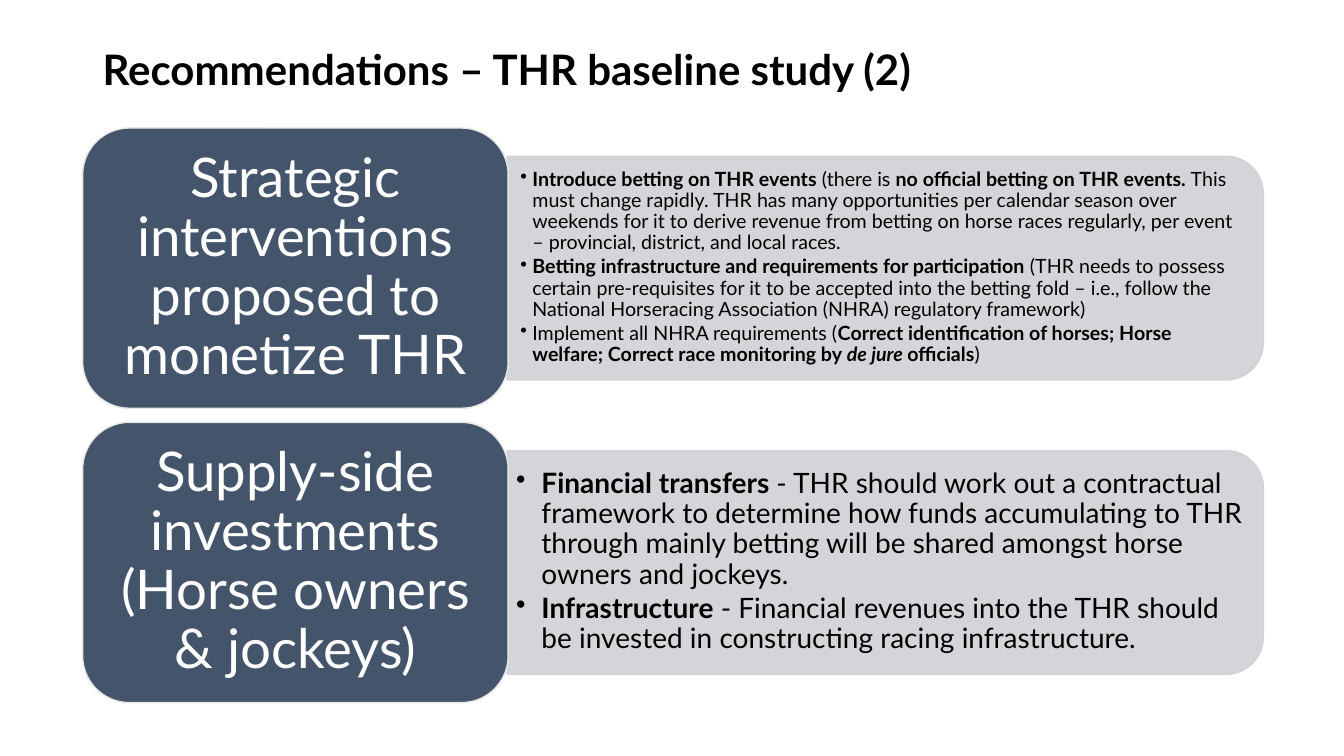
from dataclasses import dataclass

from lxml import etree
from pptx import Presentation
from pptx import util as u
from pptx.dml import color
from pptx.enum import shapes, text
from pptx.oxml import ns

INK = {"black": "000000", "white": "FFFFFF", "navy": "44546A",
       "edge": "E7E6E6", "grey": "CFD1D4"}
FONT = "Lato"


@dataclass
class Run:
    text: str
    bold: bool = False
    slant: bool = False


@dataclass
class Row:
    label: str
    size: int
    indent: float
    pad: float
    points: list[list[Run]]


ROWS = [
    Row("Strategic interventions proposed to monetize THR", 14, 0.12, 0.12, [
        [Run("Introduce betting on THR events", True),
         Run(" (there is "),
         Run("no official betting on THR events.", True),
         Run(" This must change rapidly. THR has many opportunities per calendar "
             "season over weekends for it to derive revenue from betting on horse "
             "races regularly, per event – provincial, district, and local races.")],
        [Run("Betting infrastructure and requirements for participation", True),
         Run(" (THR needs to possess certain pre-requisites for it to be accepted "
             "into the betting fold – i.e., follow the National Horseracing "
             "Association (NHRA) regulatory framework)")],
        [Run("Implement all NHRA requirements ("),
         Run("Correct identification of horses; Horse welfare; "
             "Correct race monitoring by ", True),
         Run("de jure ", True, True),
         Run("officials", True),
         Run(")")],
    ]),
    Row("Supply-side investments (Horse owners & jockeys)", 20, 0.25, 0.08, [
        [Run("Financial transfers ", True),
         Run("- THR should work out a contractual framework to determine how funds "
             "accumulating to THR through mainly betting will be shared amongst "
             "horse owners and jockeys.")],
        [Run("Infrastructure", True),
         Run(" - Financial revenues into the THR should be invested in "
             "constructing racing infrastructure.")],
    ]),
]


def rgb(name: str) -> color.RGBColor:
    return color.RGBColor.from_string(INK[name])


def box(shape, x: float, y: float):
    frame = shape.text_frame
    frame.word_wrap = True
    frame.vertical_anchor = text.MSO_ANCHOR.MIDDLE
    frame.margin_left = frame.margin_right = u.Inches(x)
    frame.margin_top = frame.margin_bottom = u.Inches(y)
    return frame


def space(para, after: int) -> etree._Element:
    para.line_spacing = 0.9
    props = para._p.get_or_add_pPr()
    gap = etree.SubElement(props, ns.qn("a:spcAft"))
    etree.SubElement(gap, ns.qn("a:spcPct"), val=str(after * 1000))
    return props


def write(para, runs: list[Run], size: int, ink: str) -> None:
    for item in runs:
        run = para.add_run()
        run.text = item.text
        font = run.font
        font.name, font.size = FONT, u.Pt(size)
        font.bold, font.italic = item.bold, item.slant
        font.color.rgb = rgb(ink)


def block(slide, kind, left: float, top: float, width: float, height: float,
          fill: str, line: str):
    shape = slide.shapes.add_shape(
        kind, *map(u.Inches, (left, top, width, height)))
    shape.shadow.inherit = False
    shape.fill.solid()
    shape.fill.fore_color.rgb = rgb(fill)
    shape.line.color.rgb = rgb(line)
    shape.line.width = u.Pt(1)
    return shape


def draw(slide, row: Row, top: float) -> None:
    kinds = shapes.MSO_SHAPE
    panel = block(slide, kinds.ROUND_2_SAME_RECTANGLE,
                  7.67, top - 2.36, 2.22, 7.5, "grey", "grey")
    panel.rotation = 90
    for tint in panel._element.spPr.iter(ns.qn("a:srgbClr")):
        etree.SubElement(tint, ns.qn("a:alpha"), val="90000")

    area = slide.shapes.add_textbox(
        *map(u.Inches, (5.04, top + 0.38, 7.39, 2.01)))
    frame = box(area, row.pad, row.pad / 2)
    for index, runs in enumerate(row.points):
        para = frame.add_paragraph() if index else frame.paragraphs[0]
        para.level = 1
        props = space(para, 15)
        props.set("marL", str(u.Inches(row.indent)))
        props.set("indent", str(-u.Inches(row.indent)))
        etree.SubElement(props, ns.qn("a:buChar"), char="•")
        write(para, runs, row.size, "black")

    card = block(slide, kinds.ROUNDED_RECTANGLE,
                 0.82, top, 4.22, 2.78, "navy", "edge")
    para = box(card, 0.16, 0.08).paragraphs[0]
    para.alignment = text.PP_ALIGN.CENTER
    space(para, 35)
    write(para, [Run(row.label)], 39, "white")


def main() -> None:
    deck = Presentation()
    deck.slide_width, deck.slide_height = u.Inches(13.33), u.Inches(7.5)
    slide = deck.slides.add_slide(deck.slide_layouts[6])

    title = slide.shapes.add_textbox(*map(u.Inches, (0.92, 0.31, 11.5, 0.81)))
    para = box(title, 0.1, 0.05).paragraphs[0]
    para.line_spacing = 0.9
    write(para, [Run("Recommendations – THR baseline study (2)", True)], 30, "black")

    for index, row in enumerate(ROWS):
        draw(slide, row, 1.27 + 2.92 * index)
    deck.save("out.pptx")


if __name__ == "__main__":
    main()
